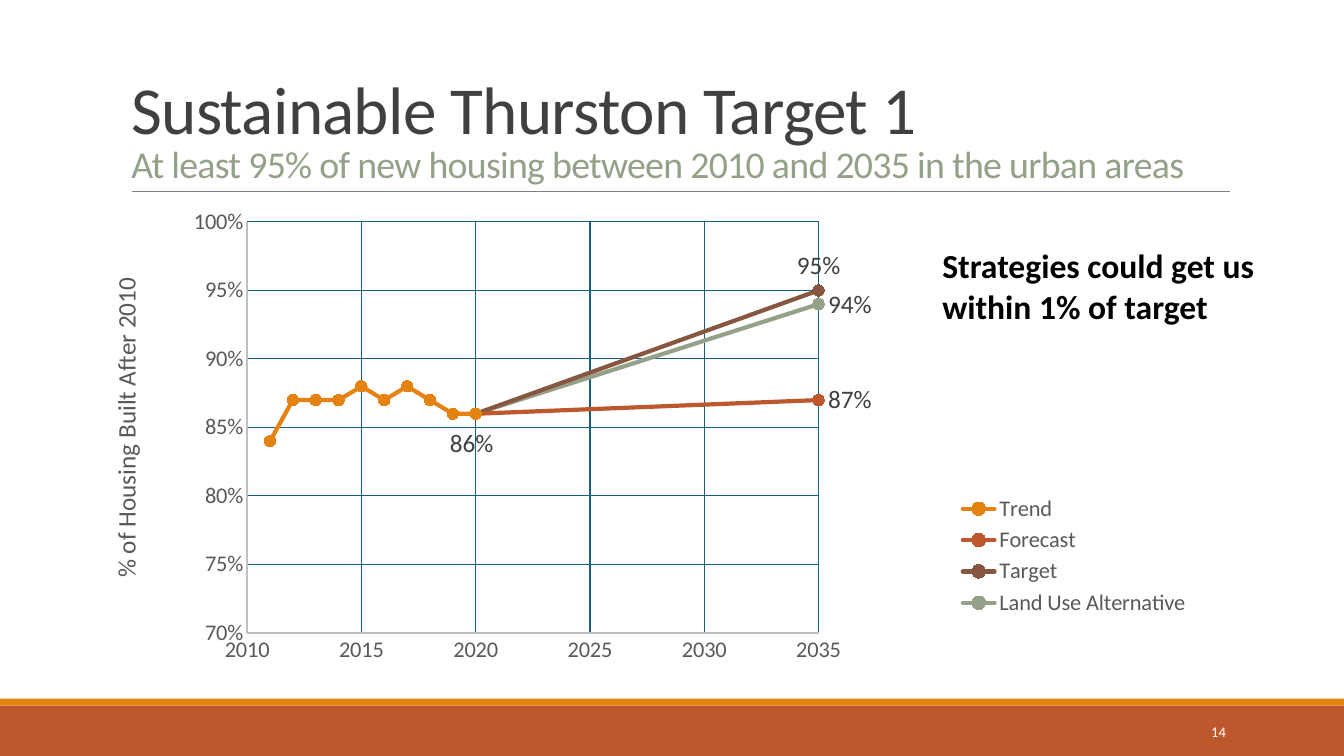
import pptx
import pptx.util
import pptx.oxml
import pptx.oxml.ns
import pptx.chart.data
import pptx.dml.color
import pptx.enum.chart
import pptx.enum.shapes
import pptx.enum.text

Pt = pptx.util.Pt
qn = pptx.oxml.ns.qn
Anchor = pptx.enum.text.MSO_ANCHOR
Align = pptx.enum.text.PP_ALIGN
Spot = pptx.enum.chart.XL_LABEL_POSITION
FONT = "Calibri"

# Content: bands are (top, height, colour)
BANDS = [(504, 36, "BD582C"), (499, 5, "E48312")]
HEADS = [
    ("Sustainable Thurston Target 1", 48, "404040"),
    ("At least 95% of new housing between 2010 and 2035 in the urban areas",
     27, "94A088"),
]
NOTE = "Strategies could get us within 1% of target"
PAGE = "14"
SIDE = "% of Housing Built After 2010"
YEARS = [*range(2010, 2021), 2035]
TREND = [0.84, 0.87, 0.87, 0.87, 0.88, 0.87, 0.88, 0.87, 0.86, 0.86]
GAP = [None] * 10
# Series: name, colour, share per year, labels by point number
SERIES = [
    ("Trend", "E48312", [None, *TREND, None], {}),
    ("Forecast", "BD582C", [*GAP, 0.86, 0.87], {11: Spot.RIGHT}),
    ("Target", "865640", [*GAP, 0.86, 0.95], {11: Spot.ABOVE}),
    ("Land Use Alternative", "94A088", [*GAP, 0.86, 0.94],
     {10: Spot.BELOW, 11: Spot.RIGHT}),
]


def rgb(code):
    return pptx.dml.color.RGBColor.from_string(code)


def style(font, size, code, bold=False):
    font.name, font.size, font.bold = FONT, Pt(size), bold
    font.color.rgb = rgb(code)


def stroke(line, code, width):
    line.color.rgb = rgb(code)
    line.width = Pt(width)


def text_box(left, top, width, height, anchor):
    box = slide.shapes.add_textbox(Pt(left), Pt(top), Pt(width), Pt(height))
    frame = box.text_frame
    frame.word_wrap = True
    frame.vertical_anchor = anchor
    return frame.paragraphs[0]


def place(node, index, inner=False, edge=True, **spots):
    """Give a chart part a manual layout, in percent of the chart."""
    for old in node.findall(qn("c:layout")):
        node.remove(old)
    rows = '<c:layoutTarget val="inner"/>' if inner else ""
    if edge:
        rows += '<c:xMode val="edge"/><c:yMode val="edge"/>'
    rows += "".join(f'<c:{key} val="{val / 100}"/>'
                    for key, val in spots.items())
    node.insert(index, pptx.oxml.parse_xml(
        f'<c:layout {pptx.oxml.ns.nsdecls("c")}>'
        f"<c:manualLayout>{rows}</c:manualLayout></c:layout>"))


deck = pptx.Presentation()
deck.slide_width, deck.slide_height = Pt(960), Pt(540)
slide = deck.slides.add_slide(deck.slide_layouts[6])

# Footer bands and title rule
for top, height, code in BANDS:
    band = slide.shapes.add_shape(
        pptx.enum.shapes.MSO_SHAPE.RECTANGLE, 0, Pt(top), Pt(960), Pt(height))
    band.shadow.inherit = False
    band.fill.solid()
    band.fill.fore_color.rgb = rgb(code)
    band.line.fill.background()
rule = slide.shapes.add_connector(
    pptx.enum.shapes.MSO_CONNECTOR.STRAIGHT,
    Pt(94.3), Pt(136.8), Pt(878.6), Pt(136.8))
stroke(rule.line, "808080", 0.5)
rule._element.spPr.append(pptx.oxml.parse_xml(
    f'<a:effectLst {pptx.oxml.ns.nsdecls("a")}/>'))

# Title: two lines of one paragraph
para = text_box(86.8, 22.3, 792, 114.5, Anchor.BOTTOM)
para.line_spacing = 0.85
for index, (words, size, code) in enumerate(HEADS):
    if index:
        para.add_line_break()
    run = para.add_run()
    run.text = words
    style(run.font, size, code)
    run._r.get_or_add_rPr().set("spc", "-50")

# Chart
data = pptx.chart.data.XyChartData(number_format="0%")
for name, code, shares, marks in SERIES:
    row = data.add_series(name)
    for year, share in zip(YEARS, shares):
        row.add_data_point(year, share)
chart = slide.shapes.add_chart(
    pptx.enum.chart.XL_CHART_TYPE.XY_SCATTER_LINES,
    Pt(66), Pt(143.8), Pt(828), Pt(342.7), data).chart
style(chart.font, 18, "000000")
chart.has_title = False
plot = chart.plots[0]
plot.vary_by_categories = False
place(chart._chartSpace.chart.plotArea, 0, True,
      x=13.35, y=4.3, w=49.3, h=85.7)

# Axes
across, up = chart.category_axis, chart.value_axis
for axis, low, high, step, form in [(across, 2010, 2035, 5, "0"),
                                    (up, 0.7, 1, 0.05, "0%")]:
    axis.minimum_scale, axis.maximum_scale = low, high
    axis.major_unit = step
    axis.major_tick_mark = pptx.enum.chart.XL_TICK_MARK.NONE
    axis.minor_tick_mark = pptx.enum.chart.XL_TICK_MARK.NONE
    axis.has_major_gridlines = True
    stroke(axis.major_gridlines.format.line, "175F7F", 0.75)
    stroke(axis.format.line, "BFBFBF", 1.25)
    style(axis.tick_labels.font, 16, "595959")
    axis.tick_labels.number_format = form
    axis.tick_labels.number_format_is_linked = False
up.has_title = True
para = up.axis_title.text_frame.paragraphs[0]
para.text = SIDE
style(para.font, 18, "595959")
place(up.axis_title._element, 1, x=1, y=15)

# Legend
chart.has_legend = True
chart.legend.position = pptx.enum.chart.XL_LEGEND_POSITION.RIGHT
chart.legend.include_in_layout = False
style(chart.legend.font, 16, "595959")
place(chart.legend._element, 1, x=73.2, y=60.4, w=23, h=27)

# Lines, markers and point labels
for line, (name, code, shares, marks) in zip(plot.series, SERIES):
    node = line._element
    for blank in node.xpath('c:yVal//c:pt[c:v="None"]'):
        blank.getparent().remove(blank)
    stroke(line.format.line, code, 3)
    for edge in node.xpath("c:spPr/a:ln"):
        edge.set("cap", "rnd")
    line.marker.style = pptx.enum.chart.XL_MARKER_STYLE.CIRCLE
    line.marker.size = 8
    line.marker.format.fill.solid()
    line.marker.format.fill.fore_color.rgb = rgb(code)
    stroke(line.marker.format.line, code, 0.75)
    for index, spot in marks.items():
        label = line.points[index].data_label
        style(label.font, 18, "404040")
        label.position = spot
    for show in node.xpath("c:dLbls/c:showVal | c:dLbls/c:showLeaderLines"):
        show.set("val", "0")
    # Nudge the label under the shared 2020 point
    for tag in node.xpath('c:dLbls/c:dLbl[c:idx/@val="10"]'):
        place(tag, 1, edge=False, x=-0.35, y=1)

# Page number and side note
para = text_box(779.8, 508.3, 103, 28.8, Anchor.MIDDLE)
para.text = PAGE
para.alignment = Align.RIGHT
style(para.font, 10.5, "FFFFFF")
para = text_box(666, 171.7, 269.3, 65.5, Anchor.TOP)
para.text = NOTE
style(para.font, 24, "000000", True)

deck.save("out.pptx")
